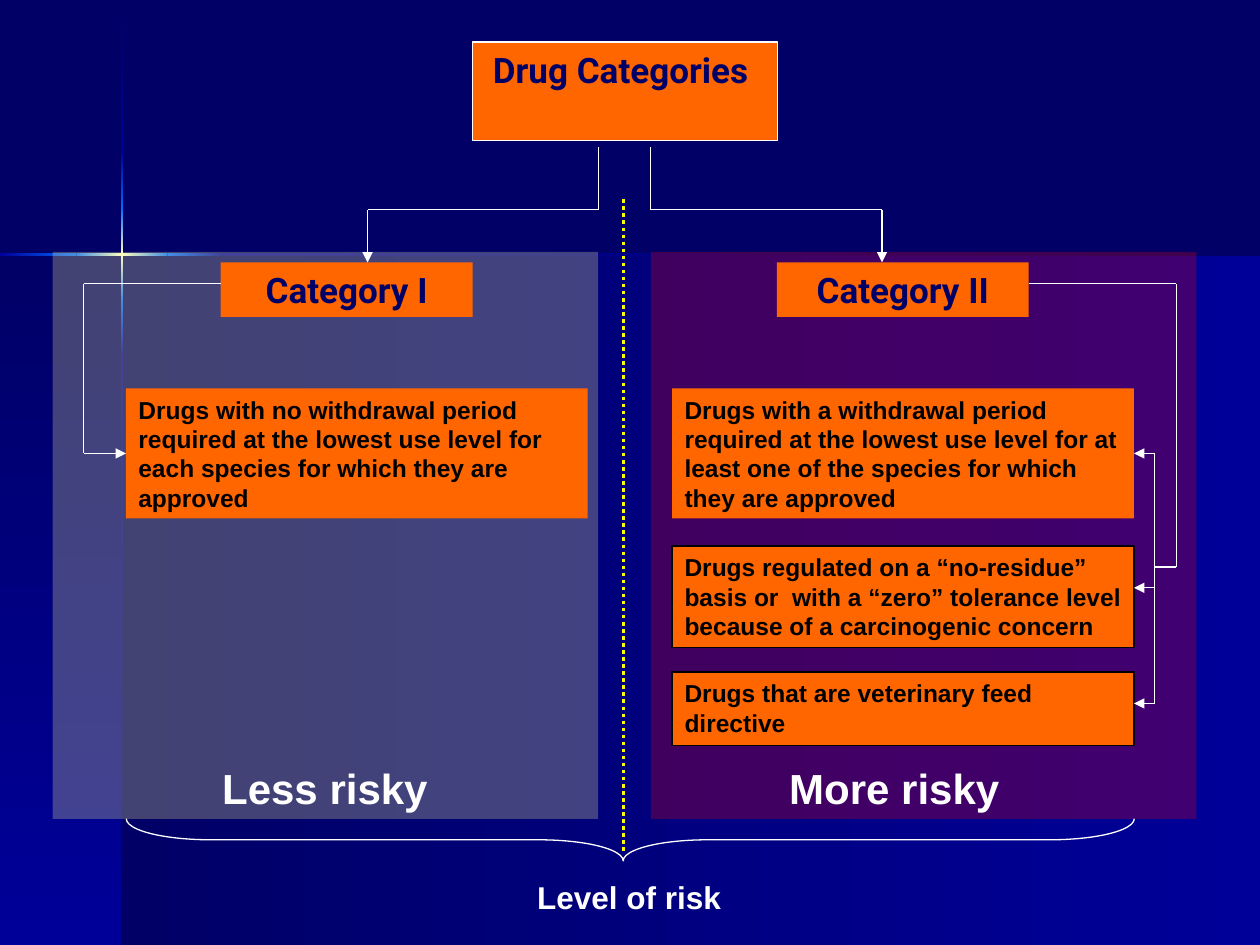
from copy import deepcopy
from dataclasses import dataclass
from itertools import pairwise

from lxml.etree import SubElement
from pptx import Presentation
from pptx.dml.color import RGBColor
from pptx.enum.dml import MSO_LINE
from pptx.enum.shapes import MSO_CONNECTOR, MSO_SHAPE
from pptx.enum.text import MSO_ANCHOR, PP_ALIGN
from pptx.oxml.ns import qn
from pptx.util import Cm, Pt


@dataclass(frozen=True)
class Theme:
    navy: str = "000066"
    blue: str = "000099"
    bright: str = "0066FF"
    cream: str = "FFFFCC"
    orange: str = "FF6600"
    white: str = "FFFFFF"
    black: str = "000000"
    yellow: str = "FFFF00"
    less_risky: str = "FFFF99"
    more_risky: str = "FF0000"
    heading_font: str = "Roboto"
    body_font: str = "Arial"
    heading_size: int = 20
    body_size: int = 14
    caption_size: int = 18
    risk_size: int = 24
    thin: float = 0.75
    divider: float = 2


THEME = Theme()
LEFT_SIDE, RIGHT_SIDE = 1, 3


def rgb(color):
    return RGBColor.from_string(color)


def add_shape(slide, kind, box, fill=None, line=None, opacity=None):
    shape = slide.shapes.add_shape(kind, *map(Cm, box))
    shape.shadow.inherit = False
    if fill:
        shape.fill.solid()
        shape.fill.fore_color.rgb = rgb(fill)
    else:
        shape.fill.background()
    if opacity:
        color = shape.element.spPr.find(qn("a:solidFill"))[0]
        SubElement(color, qn("a:alpha"), val=str(opacity * 1000))
    if line:
        shape.line.color.rgb = rgb(line)
        shape.line.width = Pt(THEME.thin)
    else:
        shape.line.fill.background()
    return shape


def add_gradient(slide, box, colors, downward=False):
    shape = add_shape(slide, MSO_SHAPE.RECTANGLE, box)
    shape.fill.gradient()
    shape.fill.gradient_angle = 270 if downward else 0
    stop_list = shape.element.spPr.find(qn("a:gradFill")).find(qn("a:gsLst"))
    while len(stop_list) < len(colors):
        stop_list.append(deepcopy(stop_list[0]))
    for index, (stop, color) in enumerate(zip(shape.fill.gradient_stops, colors)):
        stop.color.rgb = rgb(color)
        stop.position = index / (len(colors) - 1)


def write_text(shape, text, font=THEME.body_font, size=THEME.body_size,
               color=THEME.black, align=PP_ALIGN.LEFT):
    frame = shape.text_frame
    frame.word_wrap = True
    frame.vertical_anchor = MSO_ANCHOR.TOP
    paragraph = frame.paragraphs[0]
    paragraph.alignment = align
    run = paragraph.add_run()
    run.text = text
    run.font.name = font
    run.font.size = Pt(size)
    run.font.bold = True
    run.font.color.rgb = rgb(color)


def add_heading(slide, text, box, line=None):
    shape = add_shape(slide, MSO_SHAPE.RECTANGLE, box, THEME.orange, line)
    write_text(shape, text, font=THEME.heading_font, size=THEME.heading_size,
               color=THEME.navy, align=PP_ALIGN.CENTER)


def add_description(slide, text, left, top, height, line=None):
    shape = add_shape(slide, MSO_SHAPE.RECTANGLE, (left, top, 9.31, height),
                      THEME.orange, line)
    write_text(shape, text)
    return shape


def add_caption(slide, text, left, top, height, size):
    box = slide.shapes.add_textbox(Cm(left), Cm(top), Cm(4.88), Cm(height))
    write_text(box, text, size=size, color=THEME.white)


def add_line(slide, start, end, color=THEME.white, width=THEME.thin):
    line = slide.shapes.add_connector(MSO_CONNECTOR.STRAIGHT,
                                      *map(Cm, (*start, *end)))
    line.line.color.rgb = rgb(color)
    line.line.width = Pt(width)
    SubElement(line.element.spPr, qn("a:effectLst"))
    return line


def add_route(slide, points, arrow=True, target=None, side=None):
    """Join the points with straight lines; the last may end on a target's side."""
    for start, end in pairwise(points):
        line = add_line(slide, start, end)
    if arrow:
        outline = line.line._get_or_add_ln()
        SubElement(outline, qn("a:tailEnd"), type="triangle")
    if target is not None:
        line.end_connect(target, side)


def draw_backdrop(slide):
    """Two gradient fields and a cross of light where they meet."""
    background = slide.background.fill
    background.solid()
    background.fore_color.rgb = rgb(THEME.navy)
    add_gradient(slide, (2.46, 5.13, 22.94, 13.92), (THEME.navy, THEME.blue))
    add_gradient(slide, (0, 5.13, 2.46, 13.92), (THEME.navy, THEME.blue), True)

    beam = [(THEME.navy, THEME.blue), (THEME.blue, THEME.bright),
            (THEME.bright, THEME.cream, THEME.bright),
            (THEME.bright, THEME.blue), (THEME.blue, THEME.navy)]
    rows = (0.03, 3.07, 4.19, 6.05, 7.16, 19.05)
    for (top, bottom), colors in zip(pairwise(rows), beam):
        add_gradient(slide, (2.44, top, 0.05, bottom - top), colors, True)
    columns = (0, 1.54, 3.38, 4.5, 25.4)
    for (left, right), colors in zip(pairwise(columns), beam[1:]):
        add_gradient(slide, (left, 5.11, right - left, 0.05), colors)


def draw_categories(slide):
    for left, color, opacity in ((1.06, THEME.less_risky, 26),
                                 (13.12, THEME.more_risky, 25)):
        add_shape(slide, MSO_SHAPE.RECTANGLE, (left, 5.08, 11, 11.43),
                  color, opacity=opacity)
    add_heading(slide, "Drug Categories ", (9.53, 0.85, 6.14, 1.98), THEME.white)
    add_heading(slide, "Category II", (15.66, 5.29, 5.08, 1.1))
    add_heading(slide, "Category I", (4.45, 5.29, 5.08, 1.1))
    for start, end in ((12.07, 7.41), (13.12, 17.78)):
        add_route(slide, [(start, 2.96), (start, 4.23), (end, 4.23), (end, 5.29)])


def draw_descriptions(slide):
    no_withdrawal = add_description(
        slide, "Drugs with no withdrawal period required at the lowest use level "
        "for each species for which they are approved", 2.54, 7.83, 2.62)
    withdrawal = add_description(
        slide, "Drugs with a withdrawal period required at the lowest use level "
        "for at least one of the species for which they are approved",
        13.55, 7.83, 2.62)
    add_description(
        slide, "Drugs regulated on a “no-residue” basis or  with a “zero” tolerance "
        "level because of a carcinogenic concern", 13.55, 11.01, 2.05, THEME.black)
    add_description(slide, "Drugs that are veterinary feed directive",
                    13.55, 13.55, 1.48, THEME.black)

    middle, trunk, edge = 9.14, 23.28, 22.86
    add_route(slide, [(4.45, 5.72), (1.69, 5.72), (1.69, middle), (2.54, middle)],
              target=no_withdrawal, side=LEFT_SIDE)
    add_route(slide, [(20.74, 5.72), (23.71, 5.72), (23.71, 11.43), (trunk, 11.43)],
              arrow=False)
    add_line(slide, (trunk, middle), (trunk, 14.18))
    add_route(slide, [(trunk, middle), (edge, middle)],
              target=withdrawal, side=RIGHT_SIDE)
    for y in (11.85, 14.18):
        add_route(slide, [(trunk, y), (edge, y)])


def draw_risk_scale(slide):
    brace = add_shape(slide, MSO_SHAPE.RIGHT_BRACE, (12.28, 6.77, 0.85, 20.32),
                      line=THEME.white)
    brace.rotation = 90
    brace.adjustments[0] = 2
    brace.adjustments[1] = 0.507
    add_caption(slide, "Level of risk", 10.58, 17.57, 1.02, THEME.caption_size)
    add_caption(slide, "Less risky", 4.23, 15.24, 1.28, THEME.risk_size)
    add_caption(slide, "More risky", 15.66, 15.24, 1.28, THEME.risk_size)
    divider = add_line(slide, (12.57, 4.02), (12.57, 17.15),
                       THEME.yellow, THEME.divider)
    divider.line.dash_style = MSO_LINE.ROUND_DOT


def main():
    presentation = Presentation()
    presentation.slide_width, presentation.slide_height = Cm(25.4), Cm(19.05)
    slide = presentation.slides.add_slide(presentation.slide_layouts[6])
    draw_backdrop(slide)
    draw_categories(slide)
    draw_descriptions(slide)
    draw_risk_scale(slide)
    presentation.save("out.pptx")


if __name__ == "__main__":
    main()
